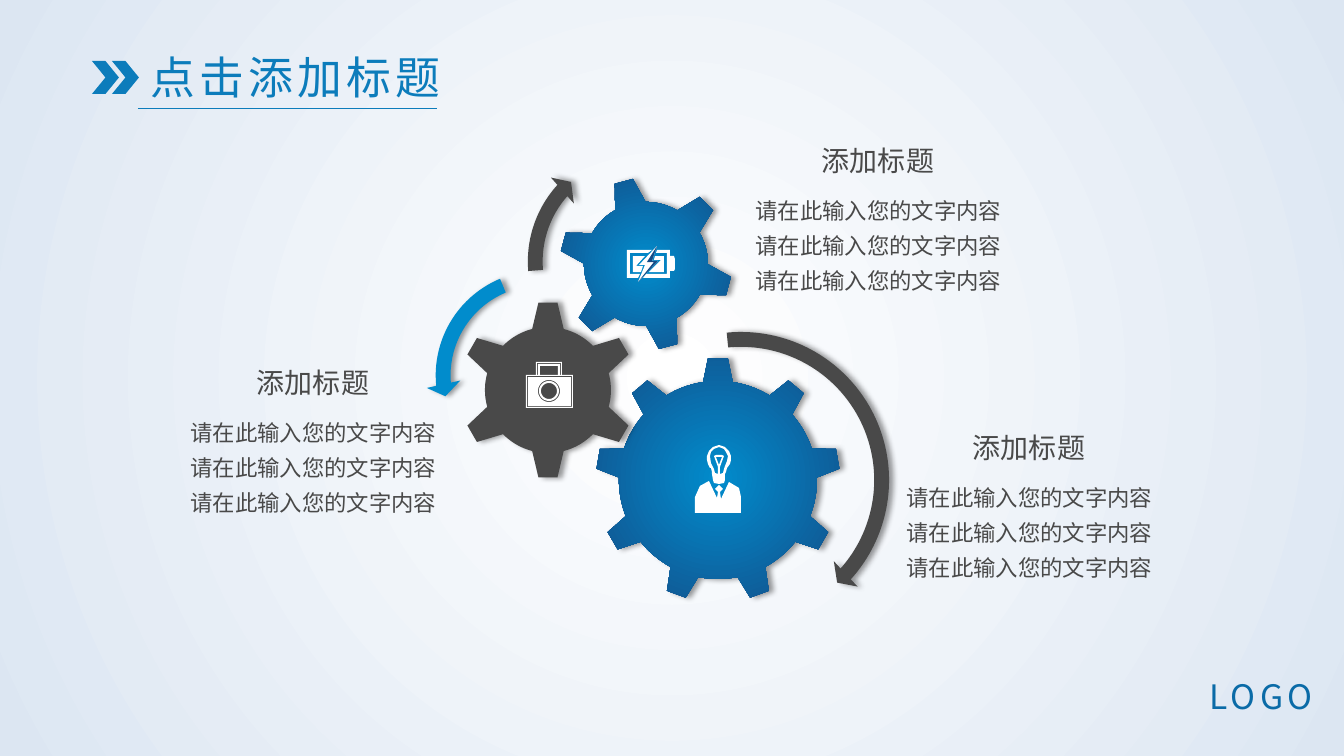
from math import cos, radians, sin

from lxml import etree
from pptx import Presentation
from pptx.dml.color import RGBColor
from pptx.enum.shapes import MSO_CONNECTOR, MSO_SHAPE
from pptx.enum.text import MSO_AUTO_SIZE as AUTO, PP_ALIGN as AL
from pptx.oxml import parse_xml
from pptx.oxml.ns import nsdecls, qn
from pptx.util import Pt

TITLE = "点击添加标题"
LOGO = "LOGO"
HEADING = "添加标题"
BODY = ["请在此输入您的文字内容"] * 3
BLOCKS = [(729, 184), (880, 471), (164, 406)]
CHEVRONS = [(112, 61), (92, 61)]

THEME = {
    "font": "Noto Sans CJK SC",
    "title": "0C7CBB", "logo": "0A6BA7", "dark": "494949",
    "bright": "018CCC", "navy": "144C87", "white": "FFFFFF", "edge": "DCE6F2",
    "title_pt": 32, "logo_pt": 24, "heading_pt": 20, "body_pt": 16,
}

GEARS = [
    dict(center=(718, 480), teeth=9, turn=0, tip=122, root=99, tip_half=4.7, root_half=8.6, radial=True),
    dict(center=(548, 390), teeth=6, turn=0, tip=88, root=63, tip_half=6.2, root_half=14.5, radial=False),
    dict(center=(646, 264), teeth=6, turn=-15, tip=86, root=62, tip_half=6.3, root_half=14.7, radial=True),
]

ARROWS = [
    (MSO_SHAPE.CIRCULAR_ARROW, (583, 322, 316), (0.047, 2.99, 25.131, 158.679, 0.055), "dark"),
    (MSO_SHAPE.LEFT_CIRCULAR_ARROW, (426, 261, 229), (0.065, 4.3, 104.891, 148.378, 0.075), "bright"),
    (MSO_SHAPE.CIRCULAR_ARROW, (518, 138, 247), (0.06, 3.941, 133.138, 105.082, 0.07), "dark"),
]


def rect(x1, y1, x2, y2):
    return [(x1, y1), (x2, y1), (x2, y2), (x1, y2)]


def arc(cx, cy, radius, start, end, steps):
    angles = [radians(start + (end - start) * i / steps) for i in range(steps + 1)]
    return [(cx + radius * sin(a), cy - radius * cos(a)) for a in angles]


def circle(radius):
    return arc(549, 391, radius, 0, 360, 48)


def arch(x1, y1, x2, y2, t):
    return [(x1, y2), (x1, y1), (x2, y1), (x2, y2), (x2 - t, y2),
            (x2 - t, y1 + t), (x1 + t, y1 + t), (x1 + t, y2)]


CAMERA = [
    ([arch(536, 362, 562, 375, 1)], "white"),
    ([arch(538, 364, 560, 375, 2)], "white"),
    ([rect(526, 375, 573, 408), rect(527, 376, 572, 407)], "white"),
    ([rect(528, 377, 571, 406), circle(11)], "white"),
    ([circle(10), circle(8)], "white"),
]
BATTERY = [
    ([[(630, 274), (630, 253), (648, 253), (652, 250), (627, 250), (627, 278), (638, 278), (640, 274)]], "white"),
    ([[(670, 256), (670, 250), (657, 250), (656, 253), (667, 253), (667, 274), (646, 274),
       (643, 278), (670, 278), (670, 271), (674, 271), (675, 269), (675, 259), (674, 256)]], "white"),
    ([[(633, 256), (633, 272), (641, 272), (643, 266), (636, 266), (645, 256)]], "white"),
    ([[(661, 260), (649, 272), (664, 272), (664, 256), (655, 256), (654, 260)]], "white"),
    ([[(652, 261), (657, 246), (639, 265), (645, 265), (638, 282), (658, 261)]], "white"),
    ([[(657, 246), (647, 262), (654, 262), (638, 282), (658, 261), (652, 261)]], "navy"),
]
BULB = [(707, 460), (708, 464), (710, 468), (711, 468), (712, 472), (712, 474), (713, 480), (714, 483),
        (719, 484), (724, 483), (725, 480), (725, 474), (726, 472), (727, 468), (730, 464), (731, 460),
        (731, 456), (729, 451), (725, 447), (719, 445), (713, 447), (709, 451), (707, 456)]
GLASS = [(710, 456), (711, 452), (714, 449), (719, 447), (724, 449), (726, 452), (728, 456), (727, 461),
         (725, 466), (724, 469), (723, 473), (720, 474), (720, 467), (724, 456), (722, 455), (716, 455),
         (714, 456), (718, 467), (718, 474), (715, 473), (714, 469), (711, 463)]
FILAMENT = [(716, 457), (722, 457), (719, 465)]
SUIT = [(741, 513), (741, 497), (739, 488), (729, 482), (721, 499), (720, 492), (723, 489), (719, 485),
        (715, 489), (718, 492), (717, 498), (709, 481), (700, 486), (695, 497), (695, 513)]
PERSON = [([BULB, GLASS, FILAMENT], "white"), ([SUIT], "white")]


def px(n):
    return round(n * 914400 / 100.8)


def rgb(name):
    return RGBColor.from_string(THEME[name])


def radial(element, inner, outer):
    solid = element.xpath(".//a:solidFill")[0]
    stops = "".join(f'<a:gs pos="{pos}"><a:srgbClr val="{THEME[name]}"/></a:gs>'
                    for pos, name in ((0, inner), (100000, outer)))
    solid.getparent().replace(solid, parse_xml(
        f'<a:gradFill {nsdecls("a")} rotWithShape="1"><a:gsLst>{stops}</a:gsLst><a:path path="circle">'
        '<a:fillToRect l="50000" t="50000" r="50000" b="50000"/></a:path></a:gradFill>'))


def paint(sp, color, shadow=False, gradient=False):
    sp.shadow.inherit = False
    sp.fill.solid()
    sp.fill.fore_color.rgb = rgb(color)
    if gradient:
        radial(sp._element.spPr, "bright", "navy")
    sp.line.fill.background()
    if shadow:
        sp._element.spPr.find(qn("a:effectLst")).append(parse_xml(
            f'<a:outerShdw {nsdecls("a")} blurRad="{Pt(4)}" dist="{Pt(3)}" dir="0" algn="l" rotWithShape="0">'
            '<a:srgbClr val="000000"><a:alpha val="40000"/></a:srgbClr></a:outerShdw>'))


def outline(shapes, contours, color, **effects):
    fb = None
    for contour in contours:
        points = [(px(x), px(y)) for x, y in contour]
        if fb is None:
            fb = shapes.build_freeform(*points[0], scale=1.0)
        else:
            fb.move_to(*points[0])
        fb.add_line_segments(points[1:], close=True)
    paint(fb.convert_to_shape(), color, **effects)


def gear(shapes, center, teeth, turn, tip, root, tip_half, root_half, radial):
    step = 360 / teeth
    points = []
    for i in range(teeth):
        mid = turn + i * step
        points += arc(*center, tip, mid - tip_half, mid + tip_half, 1)
        points += arc(*center, root, mid + root_half, mid + step - root_half, 12)
    outline(shapes, [points], "bright" if radial else "dark", shadow=True, gradient=radial)


def text(shapes, box, lines, size, color, align=AL.CENTER, wrap=True, spacing=None, tracking=0):
    tf = shapes.add_textbox(*map(px, box)).text_frame
    tf.word_wrap = wrap
    tf.auto_size = AUTO.SHAPE_TO_FIT_TEXT
    for i, line in enumerate(lines):
        p = tf.add_paragraph() if i else tf.paragraphs[0]
        p.alignment = align
        if spacing:
            p.line_spacing = spacing
        r = p.add_run()
        r.text = line
        r.font.size = Pt(THEME[size])
        r.font.color.rgb = rgb(color)
        r.font.name = THEME["font"]
        rPr = r._r.get_or_add_rPr()
        etree.SubElement(rPr, qn("a:ea")).set("typeface", THEME["font"])
        if tracking:
            rPr.set("spc", str(tracking * 100))


def main():
    prs = Presentation()
    prs.slide_width, prs.slide_height = px(1344), px(756)
    s = prs.slides.add_slide(prs.slide_layouts[6])
    s.background.fill.solid()
    s.background.fill.fore_color.rgb = rgb("white")
    radial(s._element.cSld, "white", "edge")

    text(s.shapes, (138, 45, 315, 65), [TITLE], "title_pt", "title", tracking=3)
    rule = s.shapes.add_connector(MSO_CONNECTOR.STRAIGHT, px(138), px(109), px(437), px(109))
    rule.line.color.rgb = rgb("title")
    rule.line.width = Pt(0.75)
    etree.SubElement(rule._element.spPr, qn("a:effectLst"))
    marks = s.shapes.add_group_shape().shapes
    for x, y in CHEVRONS:
        paint(marks.add_shape(MSO_SHAPE.CHEVRON, px(x), px(y), px(27), px(33)), "title")
    text(s.shapes, (1195, 671, 132, 50), [LOGO], "logo_pt", "logo", tracking=3)

    for spec_values in GEARS:
        gear(s.shapes, **spec_values)
    for kind, (x, y, side), adjustments, color in ARROWS:
        sp = s.shapes.add_shape(kind, px(x), px(y), px(side), px(side))
        for i, value in enumerate(adjustments):
            sp.adjustments[i] = value
        paint(sp, color, shadow=True)
    for icon in (CAMERA, BATTERY, PERSON):
        parts = s.shapes.add_group_shape().shapes
        for contours, color in icon:
            outline(parts, contours, color)

    for x, y in BLOCKS:
        block = s.shapes.add_group_shape().shapes
        text(block, (x, y, 299, 116), BODY, "body_pt", "dark", spacing=1.3)
        text(block, (x + 83, y - 45, 133, 44), [HEADING], "heading_pt", "dark", align=AL.JUSTIFY, wrap=False)
    prs.save("out.pptx")


if __name__ == "__main__":
    main()
